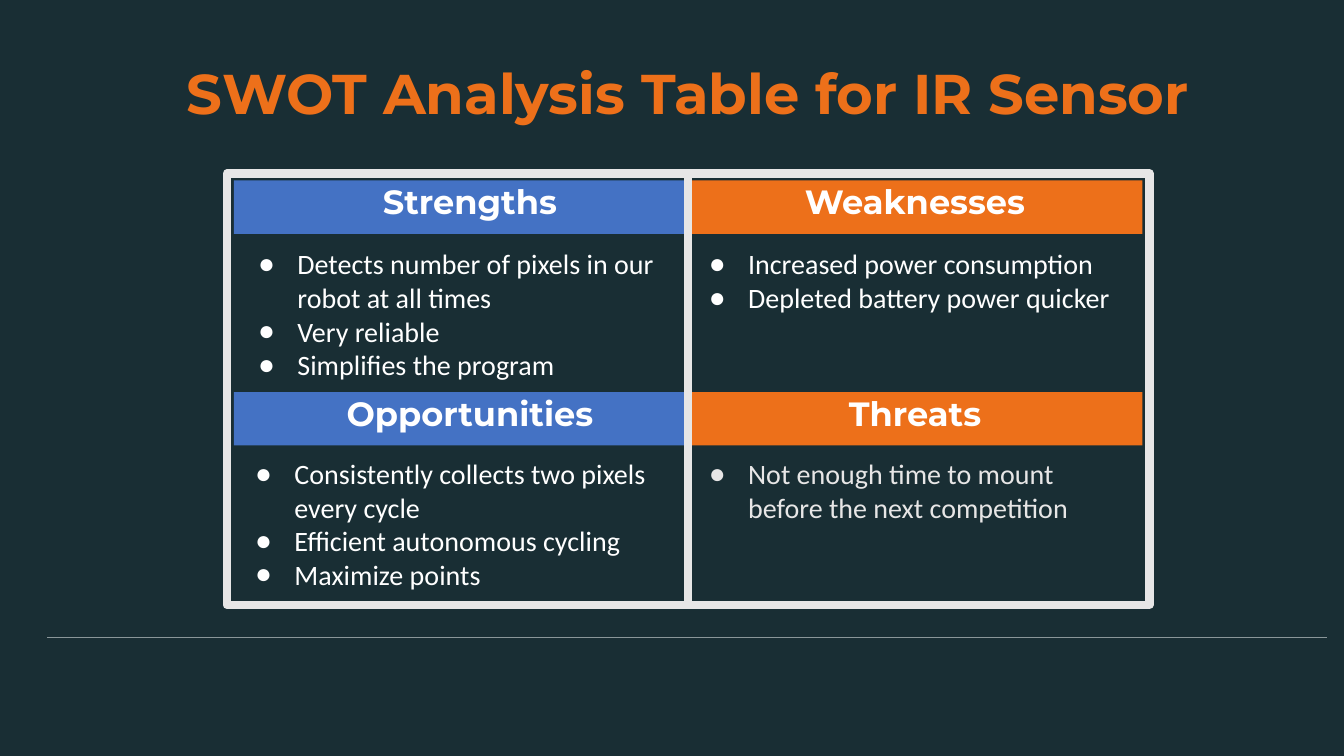
"""Build a SWOT analysis slide for an IR sensor."""
from dataclasses import dataclass

from lxml import etree
from pptx import Presentation
from pptx import util as u
from pptx.dml import color
from pptx.enum import shapes, text
from pptx.oxml import ns

HUES = {"dark": "192E34", "blue": "4472C4", "orange": "ED701A",
        "white": "FFFFFF", "pale": "E7E6E6", "rule": "8A9699"}
LEFT, RIGHT, WIDTH = 2.32, 6.82, 4.51


@dataclass
class Panel:
    """One quarter of the analysis."""
    head: str
    fill: str
    left: float
    top: float
    inset: float
    start: tuple[float, float]
    tall: float
    ink: str
    items: list[str]


PANELS = [
    Panel("Strengths", "blue", LEFT, 1.79, 0.25, (2.35, 2.35), 1.55, "white",
          ["Detects number of pixels in our robot at all times",
           "Very reliable", "Simplifies the program"]),
    Panel("Weaknesses", "orange", RIGHT, 1.79, 0, (RIGHT, 2.35), 0.88, "white",
          ["Increased power consumption", "Depleted battery power quicker"]),
    Panel("Opportunities", "blue", LEFT, 3.89, 0.25, (LEFT, 4.43), 1.55, "white",
          ["Consistently collects two pixels every cycle",
           "Efficient autonomous cycling", "Maximize points"]),
    Panel("Threats", "orange", RIGHT, 3.89, 0, (RIGHT, 4.43), 0.88, "pale",
          ["Not enough time to mount before the next competition"]),
]


def hue(name: str) -> color.RGBColor:
    """Look up a colour."""
    return color.RGBColor.from_string(HUES[name])


def box(*sides: float) -> list[u.Length]:
    """Turn numbers into lengths."""
    return [u.Inches(side) for side in sides]


def place(shape, left: float, top: float, width: float, height: float) -> None:
    """Move and size a placeholder."""
    shape.left, shape.top, shape.width, shape.height = box(left, top, width, height)


def setup(shape, anchor, pad: float):
    """Prepare a text frame and return it."""
    frame = shape.text_frame
    frame.word_wrap = True
    frame.auto_size = text.MSO_AUTO_SIZE.NONE
    frame.vertical_anchor = anchor
    frame.margin_left = frame.margin_right = u.Inches(0.1)
    frame.margin_top = frame.margin_bottom = u.Inches(pad)
    return frame


def write(para, words: str, face: str, size: int, ink: str, bold: bool) -> None:
    """Add one styled run."""
    run = para.add_run()
    run.text = words
    font = run.font
    font.name, font.size, font.bold = face, u.Pt(size), bold
    font.color.rgb = hue(ink)


def indent(para, margin: float, hang: float):
    """Set the paragraph indents and return its properties."""
    props = para._p.get_or_add_pPr()
    props.set("marL", str(u.Inches(margin)))
    props.set("indent", str(u.Inches(hang)))
    return props


def bullet(para, ink: str) -> None:
    """Give a paragraph a round bullet."""
    props = indent(para, 0.5, -0.39)
    tint = etree.SubElement(props, ns.qn("a:buClr"))
    etree.SubElement(tint, ns.qn("a:srgbClr"), val=HUES[ink])
    etree.SubElement(props, ns.qn("a:buChar"), char="●")


def heading(shape, words: str, size: int, ink: str, anchor, inset: float = 0) -> None:
    """Write a centred heading."""
    para = setup(shape, anchor, 0.05).paragraphs[0]
    if inset:
        indent(para, inset, -0.08)
    para.alignment = text.PP_ALIGN.CENTER
    para.line_spacing = 0.9
    para.space_before = u.Pt(0)
    write(para, words, "Montserrat", size, ink, True)


def banner(slide, panel: Panel) -> None:
    """Draw the coloured heading of a panel."""
    bar = slide.shapes.add_shape(shapes.MSO_SHAPE.RECTANGLE,
                                 *box(panel.left, panel.top, WIDTH, 0.53))
    bar.shadow.inherit = False
    bar.fill.solid()
    bar.fill.fore_color.rgb = hue(panel.fill)
    bar.line.fill.background()
    heading(bar, panel.head, 24, "white", text.MSO_ANCHOR.TOP, panel.inset)


def points(holder, panel: Panel) -> None:
    """Fill a placeholder with the points of a panel."""
    place(holder, *panel.start, WIDTH, panel.tall)
    frame = setup(holder, text.MSO_ANCHOR.TOP, 0.1)
    for i, item in enumerate(panel.items):
        para = frame.add_paragraph() if i else frame.paragraphs[0]
        bullet(para, panel.ink)
        para.space_before = u.Pt(0)
        write(para, item, "Calibri", 20, panel.ink, False)


def stroke(slide, ends: list[u.Length], ink: str, width: float):
    """Draw a straight line."""
    line = slide.shapes.add_connector(shapes.MSO_CONNECTOR.STRAIGHT, *ends)
    line.line.color.rgb = hue(ink)
    line.line.width = u.Pt(width)
    etree.SubElement(line._element.spPr, ns.qn("a:effectLst"))
    return line


def border(slide):
    """Draw the outer frame behind everything else."""
    frame = slide.shapes.add_shape(shapes.MSO_SHAPE.RECTANGLE,
                                   *box(2.25, 1.72, 9.15, 4.28))
    frame.shadow.inherit = False
    frame.fill.solid()
    frame.fill.fore_color.rgb = hue("dark")
    frame.line.color.rgb = hue("pale")
    frame.line.width = u.Pt(6)
    slide.shapes._spTree.insert(2, frame._element)
    return frame


def main() -> None:
    """Build and save the slide."""
    deck = Presentation()
    deck.slide_width, deck.slide_height = box(13.33, 7.5)
    slide = deck.slides.add_slide(deck.slide_layouts.get_by_name("Comparison"))
    slide.background.fill.solid()
    slide.background.fill.fore_color.rgb = hue("dark")
    title, *lists = slide.placeholders
    place(title, 1.23, 0.39, 11.18, 1.13)
    heading(title, "SWOT Analysis Table for IR Sensor", 40, "orange",
            text.MSO_ANCHOR.MIDDLE)
    frame = border(slide)
    stroke(slide, box(0.47, 6.32, 13.16, 6.32), "rule", 0.75)
    for holder, panel in zip(lists, PANELS):
        banner(slide, panel)
        points(holder, panel)
    split = stroke(slide, box(6.83, 1.72, 6.83, 6), "pale", 6)
    split.begin_connect(frame, 0)
    split.end_connect(frame, 2)
    deck.save("out.pptx")


if __name__ == "__main__":
    main()
